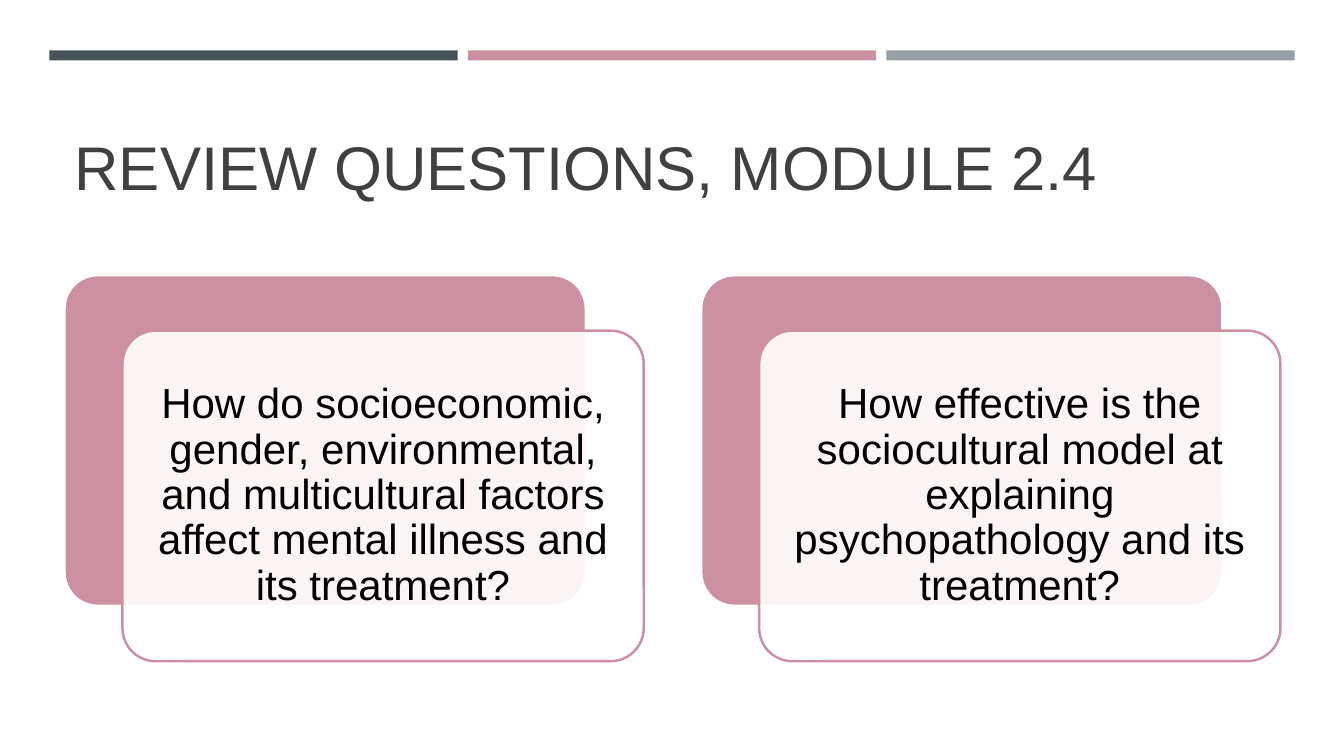
from dataclasses import dataclass

from lxml import etree
from pptx import Presentation
from pptx import util as u
from pptx.dml.color import RGBColor
from pptx.enum import shapes, text
from pptx.oxml import ns


@dataclass(frozen=True)
class Theme:
    font: str = "Arial"
    slate: str = "465359"
    rose: str = "CC90A0"
    gray: str = "969FA7"
    white: str = "FFFFFF"
    heading: str = "404040"
    body: str = "000000"
    title_size: int = 44
    body_size: int = 30
    outline: float = 1.75


THEME = Theme()
QUESTIONS = [
    "How do socioeconomic, gender, environmental, and multicultural factors "
    "affect mental illness and its treatment?",
    "How effective is the sociocultural model at explaining psychopathology "
    "and its treatment?",
]
CARD_WIDTH, CARD_HEIGHT = 5.17, 3.28
CARD_LEFT, CARD_TOP, CARD_PITCH = 0.64, 2.73, 6.315
FRONT_SHIFT_X, FRONT_SHIFT_Y = 0.575, 0.55
TEXT_MARGIN = 0.095


def add_box(slide, kind, left, top, width, height, fill, line=None):
    shape = slide.shapes.add_shape(
        kind, u.Inches(left), u.Inches(top), u.Inches(width), u.Inches(height))
    shape.shadow.inherit = False
    shape.fill.solid()
    shape.fill.fore_color.rgb = RGBColor.from_string(fill)
    if line:
        shape.line.color.rgb = RGBColor.from_string(line)
        shape.line.width = u.Pt(THEME.outline)
    else:
        shape.line.fill.background()
    return shape


def add_rounded(slide, left, top, fill, line):
    shape = add_box(slide, shapes.MSO_SHAPE.ROUNDED_RECTANGLE,
                    left, top, CARD_WIDTH, CARD_HEIGHT, fill, line)
    shape.adjustments[0] = 0.1
    return shape


def set_opacity(shape, percent):
    color = shape.fill._xPr.find(ns.qn("a:solidFill"))[0]
    etree.SubElement(color, ns.qn("a:alpha"), val=str(percent * 1000))


def add_text(slide, left, top, width, height, words, size, color,
             anchor, alignment, inset=None):
    box = slide.shapes.add_textbox(
        u.Inches(left), u.Inches(top), u.Inches(width), u.Inches(height))
    frame = box.text_frame
    frame.word_wrap = True
    frame.vertical_anchor = anchor
    if inset is not None:
        frame.margin_left = frame.margin_right = u.Inches(inset)
        frame.margin_top = frame.margin_bottom = u.Inches(inset)
    paragraph = frame.paragraphs[0]
    paragraph.alignment = alignment
    paragraph.line_spacing = 0.9
    run = paragraph.add_run()
    run.text = words
    run.font.name = THEME.font
    run.font.size = u.Pt(size)
    run.font.color.rgb = RGBColor.from_string(color)


def add_top_bars(slide):
    for index, color in enumerate((THEME.slate, THEME.rose, THEME.gray)):
        add_box(slide, shapes.MSO_SHAPE.RECTANGLE,
                0.49 + index * 4.15, 0.5, 4.05, 0.1, color)


def add_question_card(slide, left, question):
    """Draw a solid card with a translucent, outlined card in front of it."""
    add_rounded(slide, left, CARD_TOP, THEME.rose, THEME.white)
    front_left, front_top = left + FRONT_SHIFT_X, CARD_TOP + FRONT_SHIFT_Y
    front = add_rounded(slide, front_left, front_top, THEME.white, THEME.rose)
    set_opacity(front, 90)
    add_text(slide, front_left + TEXT_MARGIN, front_top + TEXT_MARGIN,
             CARD_WIDTH - 2 * TEXT_MARGIN, CARD_HEIGHT - 2 * TEXT_MARGIN,
             question, THEME.body_size, THEME.body,
             text.MSO_ANCHOR.MIDDLE, text.PP_ALIGN.CENTER, inset=0.12)


def main():
    presentation = Presentation()
    presentation.slide_width = u.Inches(13.33)
    presentation.slide_height = u.Inches(7.5)
    slide = presentation.slides.add_slide(presentation.slide_layouts[6])
    add_top_bars(slide)
    add_text(slide, 0.64, 0.77, 12.06, 1.3, "REVIEW QUESTIONS, MODULE 2.4",
             THEME.title_size, THEME.heading,
             text.MSO_ANCHOR.BOTTOM, text.PP_ALIGN.LEFT)
    for index, question in enumerate(QUESTIONS):
        add_question_card(slide, CARD_LEFT + index * CARD_PITCH, question)
    presentation.save("out.pptx")


if __name__ == "__main__":
    main()
